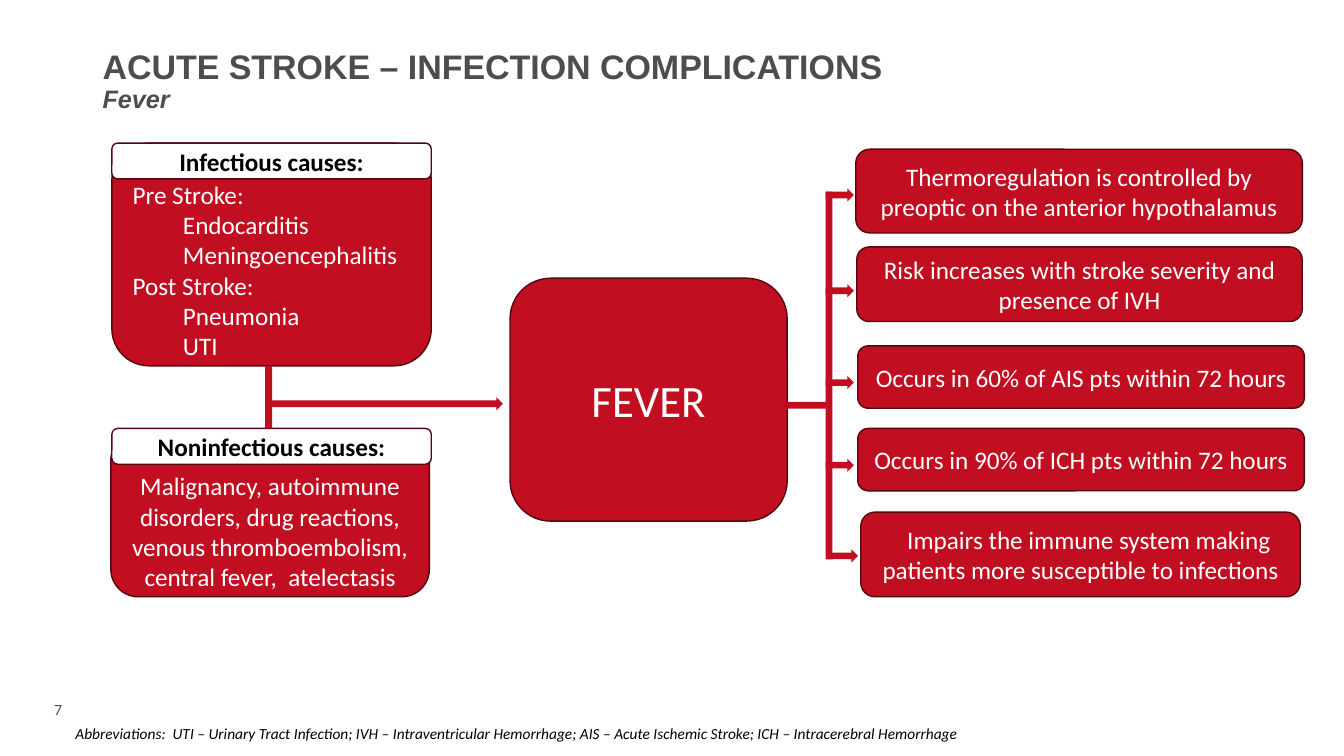
from pptx import Presentation
from pptx.dml.color import RGBColor
from pptx.enum import shapes, text
from pptx.util import Pt

RED = RGBColor(0xC1, 0x0E, 0x20)
MAROON = RGBColor(0x55, 0x06, 0x0E)
WHITE = RGBColor(0xFF, 0xFF, 0xFF)
BLACK = RGBColor(0, 0, 0)
GRAY = RGBColor(0x4D, 0x4D, 0x4F)
ROUNDED = shapes.MSO_SHAPE.FLOWCHART_ALTERNATE_PROCESS
ARROW = shapes.MSO_SHAPE.RIGHT_ARROW
BAR = shapes.MSO_SHAPE.RECTANGLE
CENTER, LEFT = text.PP_ALIGN.CENTER, text.PP_ALIGN.LEFT
MIDDLE, TOP = text.MSO_ANCHOR.MIDDLE, text.MSO_ANCHOR.TOP

deck = Presentation()
deck.slide_width, deck.slide_height = Pt(960), Pt(540)
page = deck.slides.add_slide(deck.slide_layouts[6])


def add_shape(kind, place, fill=RED, line=None):
    shape = page.shapes.add_shape(kind, *[Pt(value) for value in place])
    shape.shadow.inherit = False
    shape.fill.solid()
    shape.fill.fore_color.rgb = fill
    if line is None:
        shape.line.fill.background()
    else:
        shape.line.color.rgb = line
        shape.line.width = Pt(1)
    return shape


def write(box, words, size=18, font="Calibri", color=WHITE, bold=False, italic=False,
          align=CENTER, anchor=MIDDLE, wrap=True, top=3.6, bottom=3.6):
    frame = box.text_frame
    frame.word_wrap = wrap
    frame.vertical_anchor = anchor
    frame.margin_top, frame.margin_bottom = Pt(top), Pt(bottom)
    frame.text = words
    for para in frame.paragraphs:
        para.alignment = align
        for span in para.runs:
            span.font.size = Pt(size)
            span.font.name = font
            span.font.color.rgb = color
            span.font.bold = bold
            span.font.italic = italic
    return frame


number = page.shapes.add_textbox(Pt(31.7), Pt(497.5), Pt(28), Pt(19.4))
write(number, "7", size=10, font="Lato", color=GRAY, align=LEFT, anchor=TOP, wrap=False)

title = page.shapes.add_textbox(Pt(66.2), Pt(41), Pt(828), Pt(44))
frame = write(title, "ACUTE STROKE – INFECTION COMPLICATIONS\vFever", size=24.3, font="Arial",
              color=GRAY, bold=True, align=LEFT, anchor=text.MSO_ANCHOR.BOTTOM)
para = frame.paragraphs[0]
para.line_spacing = 0.9
subtitle = para.runs[1]
subtitle.font.size = Pt(18)
subtitle.font.italic = True

fever = add_shape(ROUNDED, (364.3, 198.7, 198, 173.5), line=MAROON)
write(fever, "FEVER", size=32)

effects = [
    ("Thermoregulation is controlled by preoptic on the anterior hypothalamus",
     (611.3, 106.6, 319, 59.8)),
    ("Risk increases with stroke severity and presence of IVH", (612, 176.4, 318.2, 53.3)),
    ("Occurs in 60% of AIS pts within 72 hours", (612.7, 247, 319, 44.6)),
    ("Occurs in 90% of ICH pts within 72 hours", (612.7, 306, 319, 44.6)),
    ("Impairs the immune system making patients more susceptible to infections",
     (614.9, 365.8, 313.9, 60.5)),
]
for words, place in effects:
    frame = write(add_shape(ROUNDED, place, line=MAROON), words)
frame.paragraphs[0]._p.get_or_add_pPr().set("indent", str(Pt(12)))

infectious = add_shape(ROUNDED, (79.9, 102.2, 228.2, 159.1), line=MAROON)
frame = write(infectious,
              "Pre Stroke:\nEndocarditis\nMeningoencephalitis\nPost Stroke:\nPneumonia\nUTI",
              align=LEFT, anchor=TOP, top=18, bottom=0)
for para in frame.paragraphs:
    if not para.text.endswith(":"):
        para.level = 1
        properties = para._p.get_or_add_pPr()
        properties.set("marL", str(Pt(36)))
        properties.set("indent", "0")

noninfectious = add_shape(ROUNDED, (79.2, 308.9, 227.5, 117.4), line=MAROON)
write(noninfectious,
      "Malignancy, autoimmune disorders, drug reactions, venous thromboembolism, "
      "central fever,  atelectasis", anchor=TOP, top=21.6, bottom=0)

for words, top in [("Infectious causes:", 102.2), ("Noninfectious causes:", 306)]:
    header = add_shape(ROUNDED, (79.9, top, 228.2, 25.6), fill=WHITE, line=MAROON)
    write(header, words, color=BLACK, bold=True, top=0, bottom=0)

notes = page.shapes.add_textbox(Pt(46.8), Pt(514), Pt(775.4), Pt(20.6))
write(notes, "Abbreviations:  UTI – Urinary Tract Infection; IVH – Intraventricular Hemorrhage; "
      "AIS – Acute Ischemic Stroke; ICH – Intracerebral Hemorrhage",
      size=11, color=BLACK, italic=True, align=LEFT, anchor=TOP)

add_shape(ARROW, (193.7, 283.7, 165.6, 9.4))
for place in [(189.4, 261.4, 5, 44.6), (589.7, 136.8, 5, 262.8), (562, 287, 31.7, 5)]:
    add_shape(BAR, place)
for left, top in [(589.7, 134.6), (589.7, 203), (589.7, 268.6), (589.7, 327.6), (592.6, 392.4)]:
    add_shape(ARROW, (left, top, 20.2, 9.4))

deck.save("out.pptx")
